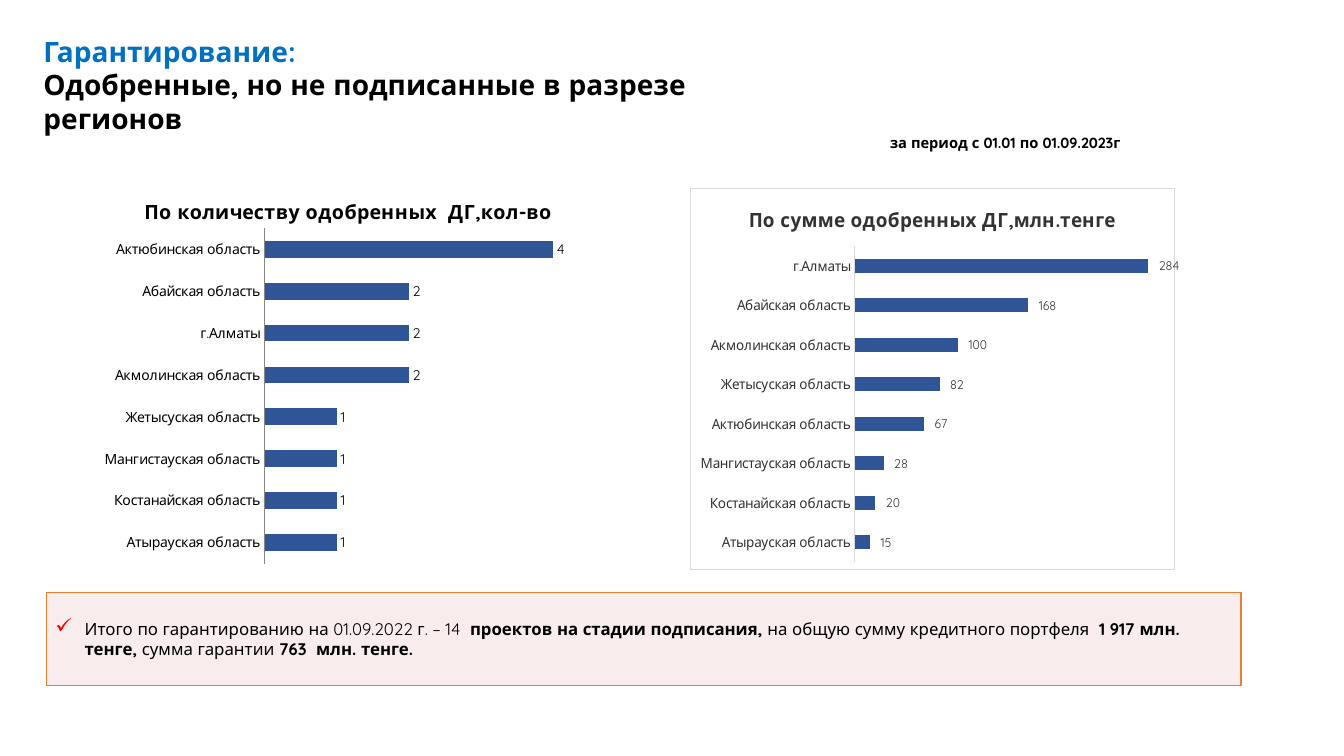
from lxml import etree
from pptx import Presentation
from pptx import util as u
from pptx.chart import data as chart_data
from pptx.dml.color import RGBColor
from pptx.enum import chart as ch, shapes, text
from pptx.oxml import parse_xml
from pptx.oxml.ns import nsdecls, qn

FONT = "Quicksand"
BLACK, DARK, GREY, BLUE = "000000", "333333", "D9D9D9", "2F5597"
AMOUNT_FORMAT = r'_-* #\ ##0_р_._-;\-* #\ ##0_р_._-;_-* "-"'


def color(value):
    return RGBColor.from_string(value)


def set_font(font, **values):
    """Apply the format values; "fill" is a hex colour."""
    fill = values.pop("fill", BLACK)
    for name, value in {"name": FONT, **values}.items():
        setattr(font, name, value)
    font.fill.solid()
    font.fill.fore_color.rgb = color(fill)


class SlideBuilder:
    """Style and current slide; boxes are (left, top, width, height) in percent of the slide."""

    def __init__(self, presentation):
        self.presentation = presentation
        self.slide = presentation.slides.add_slide(presentation.slide_layouts[5])

    def place(self, box):
        sizes = (self.presentation.slide_width, self.presentation.slide_height) * 2
        return [round(size * share / 100) for size, share in zip(sizes, box)]

    def add_runs(self, paragraph, runs, size):
        """Add (text, bold, colour) runs to the paragraph."""
        for words, bold, fill in runs:
            run = paragraph.add_run()
            run.text = words
            set_font(run.font, size=u.Pt(size), bold=bold, fill=fill)

    def title(self, box, lines, size):
        shape = self.slide.shapes.title
        shape.left, shape.top, shape.width, shape.height = self.place(box)
        frame = shape.text_frame
        for name, value in {"vertical_anchor": text.MSO_ANCHOR.TOP, "word_wrap": True,
                            "auto_size": text.MSO_AUTO_SIZE.NONE}.items():
            setattr(frame, name, value)
        paragraph = frame.paragraphs[0]
        paragraph.alignment = text.PP_ALIGN.LEFT
        for index, (words, fill) in enumerate(lines):
            if index:
                paragraph.add_line_break()
            self.add_runs(paragraph, [(words, True, fill)], size)

    def label(self, box, words, size):
        frame = self.slide.shapes.add_textbox(*self.place(box)).text_frame
        frame.word_wrap = False
        self.add_runs(frame.paragraphs[0], [(words, True, BLACK)], size)

    def summary(self, box, runs, size):
        """Tinted box with one check-marked paragraph."""
        shape = self.slide.shapes.add_shape(shapes.MSO_SHAPE.RECTANGLE, *self.place(box))
        shape.shadow.inherit = False
        shape.fill.solid()
        shape.fill.fore_color.rgb = color("F2DCDB")
        tint = shape.fill._xPr.find(".//" + qn("a:srgbClr"))
        etree.SubElement(tint, qn("a:alpha"), val="50000")
        shape.line.color.rgb = color("ED7D31")
        shape.line.width = u.Pt(1)

        frame = shape.text_frame
        for name, value in {"margin_left": u.Inches(0.08), "margin_right": u.Inches(0.08),
                            "margin_top": u.Inches(0.04), "margin_bottom": u.Inches(0.04),
                            "vertical_anchor": text.MSO_ANCHOR.MIDDLE, "word_wrap": True}.items():
            setattr(frame, name, value)
        paragraph = frame.paragraphs[0]
        paragraph.alignment = text.PP_ALIGN.LEFT
        paragraph.space_after = u.Pt(6)
        properties = paragraph._p.get_or_add_pPr()
        properties.set("marL", str(u.Inches(0.3)))
        properties.set("indent", str(u.Inches(-0.29)))
        bullet_color = etree.SubElement(properties, qn("a:buClr"))
        etree.SubElement(bullet_color, qn("a:srgbClr"), val="FF0000")
        etree.SubElement(properties, qn("a:buSzPct"), val="125000")
        etree.SubElement(properties, qn("a:buChar"), char="✓")
        self.add_runs(paragraph, runs, size)

    def bar_chart(self, box, title, values, maximum, gap, layout, axis_line, number_format,
                  text_color=BLACK, label_size=10, framed=False):
        """Horizontal bars; values run from the bottom up, layout is the inner plot's x, y, w, h."""
        source = chart_data.CategoryChartData()
        source.categories = list(values)
        source.add_series("Series 1", list(values.values()))
        chart = self.slide.shapes.add_chart(
            ch.XL_CHART_TYPE.BAR_CLUSTERED, *self.place(box), source).chart
        chart.has_legend = False
        set_font(chart.font, name="Calibri", size=u.Pt(10))
        chart.has_title = True
        self.add_runs(chart.chart_title.text_frame.paragraphs[0], [(title, True, text_color)], 14)

        regions, amounts = chart.category_axis, chart.value_axis
        regions.major_tick_mark = ch.XL_TICK_MARK.NONE
        regions.format.line.color.rgb = color(axis_line)
        regions.format.line.width = u.Pt(0.75)
        set_font(regions.tick_labels.font, size=u.Pt(10), fill=text_color)
        for name, value in {"visible": False, "has_major_gridlines": False,
                            "minimum_scale": 0, "maximum_scale": maximum}.items():
            setattr(amounts, name, value)

        plot = chart.plots[0]
        plot.gap_width = gap
        plot.vary_by_categories = False
        bars = plot.series[0].format.fill
        bars.solid()
        bars.fore_color.rgb = color(BLUE)
        plot.has_data_labels = True
        labels = plot.data_labels
        for name, value in {"show_value": True, "number_format": number_format,
                            "number_format_is_linked": False,
                            "position": ch.XL_LABEL_POSITION.OUTSIDE_END}.items():
            setattr(labels, name, value)
        set_font(labels.font, size=u.Pt(label_size), fill=text_color)
        self.lay_out_plot(chart, layout)
        if framed:
            chart._chartSpace.find(qn("c:txPr")).addprevious(parse_xml(
                f'<c:spPr {nsdecls("c", "a")}>'
                '<a:solidFill><a:srgbClr val="FFFFFF"/></a:solidFill>'
                f'<a:ln w="{u.Pt(0.75)}"><a:solidFill><a:srgbClr val="{GREY}"/></a:solidFill></a:ln>'
                '</c:spPr>'))

    def lay_out_plot(self, chart, layout):
        area = chart._chartSpace.find(".//" + qn("c:plotArea"))
        for old in area.findall(qn("c:layout")):
            area.remove(old)
        element = etree.Element(qn("c:layout"))
        manual = etree.SubElement(element, qn("c:manualLayout"))
        settings = [("layoutTarget", "inner"), ("xMode", "edge"), ("yMode", "edge"),
                    *zip("xywh", layout)]
        for name, value in settings:
            etree.SubElement(manual, qn("c:" + name), val=str(value))
        area.insert(0, element)


def main():
    presentation = Presentation()
    presentation.slide_width, presentation.slide_height = u.Inches(13.33), u.Inches(7.5)
    builder = SlideBuilder(presentation)
    builder.title((2.48, 3.87, 59.04, 14.8), [
        ("Гарантирование: ", "0070C0"),
        ("Одобренные, но не подписанные в разрезе регионов", BLACK)], 20)
    builder.label((65.49, 17.07, 19.35, 3.73), "за период с 01.01 по 01.09.2023г", 10.5)
    builder.summary((3.45, 78.4, 88.9, 12.27), [
        ("Итого по гарантированию на 01.09.2022 г. – 14 ", False, BLACK),
        (" проектов на стадии подписания, ", True, BLACK),
        ("на общую сумму кредитного портфеля  ", False, BLACK),
        ("1 917 млн. тенге, ", True, BLACK),
        ("сумма гарантии", False, BLACK),
        (" 763  млн. тенге.", True, BLACK)], 12)
    builder.bar_chart(
        (6.45, 23.87, 38.93, 52.8), "По количеству одобренных  ДГ,кол-во",
        {"Атырауская область": 1, "Костанайская область": 1, "Мангистауская область": 1,
         "Жетысуская область": 1, "Акмолинская область": 2, "г.Алматы": 2,
         "Абайская область": 2, "Актюбинская область": 4},
        maximum=4.5, gap=150, layout=(0.34, 0.12, 0.62, 0.84),
        axis_line="868686", number_format="#,##0")
    builder.bar_chart(
        (51.31, 24.93, 37.43, 50.53), "По сумме одобренных ДГ,млн.тенге",
        {"Атырауская область": 15, "Костанайская область": 20, "Мангистауская область": 28,
         "Актюбинская область": 67, "Жетысуская область": 82, "Акмолинская область": 100,
         "Абайская область": 168, "г.Алматы": 284},
        maximum=300, gap=182, layout=(0.34, 0.15, 0.64, 0.83),
        axis_line=GREY, number_format=AMOUNT_FORMAT, text_color=DARK, label_size=9, framed=True)
    presentation.save("out.pptx")


if __name__ == "__main__":
    main()
